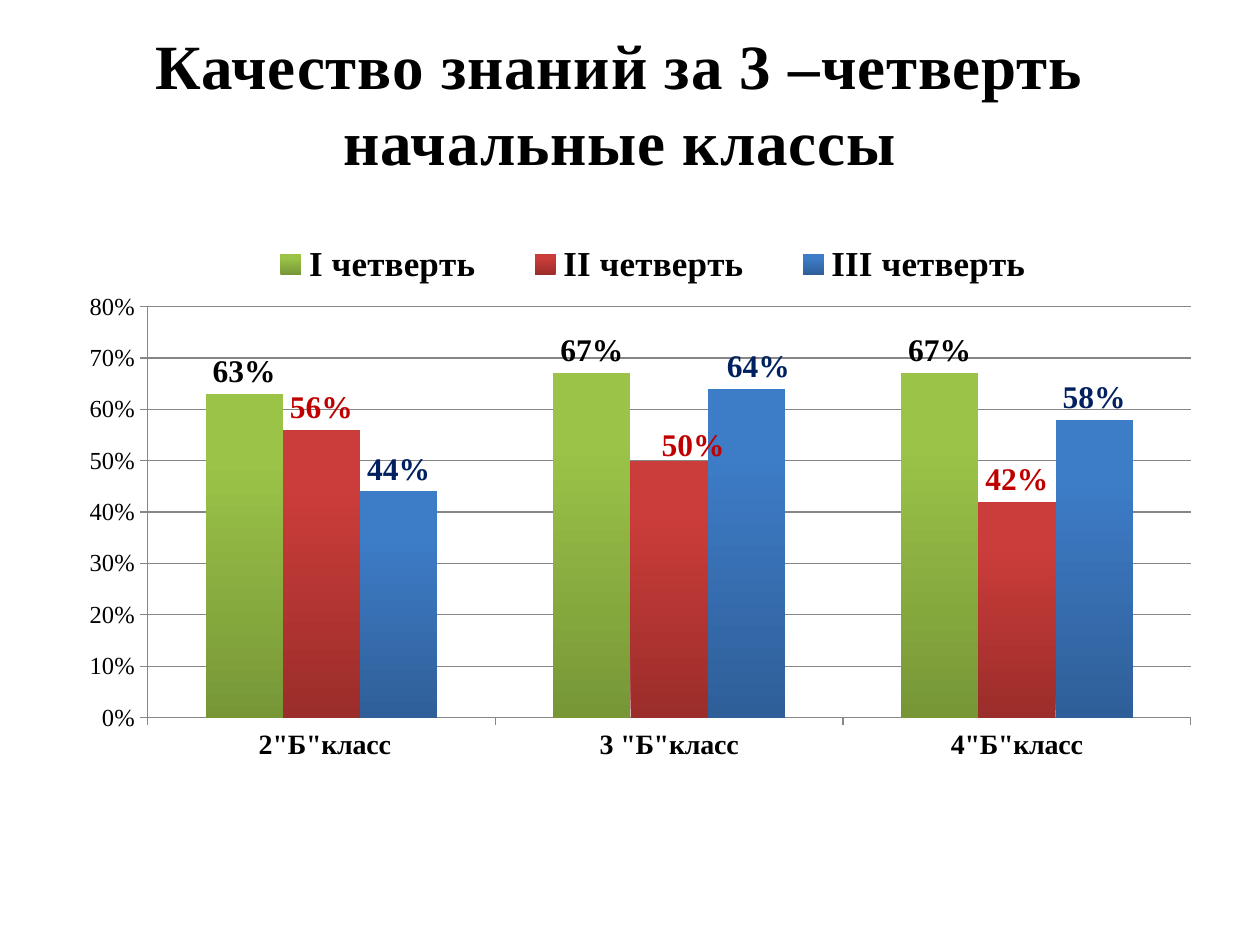
import pptx
import pptx.chart.data
import pptx.dml.color
import pptx.enum.chart
import pptx.enum.text
import pptx.oxml
import pptx.oxml.ns
import pptx.util
from pptx.util import Cm

RGBColor = pptx.dml.color.RGBColor
BLACK = RGBColor(0x00, 0x00, 0x00)
GRID_GRAY = RGBColor(0x86, 0x86, 0x86)
GREEN_DARK = RGBColor(0x77, 0x97, 0x37)
GREEN_LIGHT = RGBColor(0x9B, 0xC3, 0x48)
RED_DARK = RGBColor(0x9B, 0x2D, 0x2A)
RED_LIGHT = RGBColor(0xCB, 0x3D, 0x3A)
BLUE_DARK = RGBColor(0x2F, 0x5F, 0x99)
BLUE_LIGHT = RGBColor(0x3D, 0x7C, 0xC7)
LABEL_RED = RGBColor(0xC0, 0x00, 0x00)
LABEL_NAVY = RGBColor(0x00, 0x20, 0x60)

CLASSES = [' 2"Б"класс', '3 "Б"класс', '4"Б"класс']
QUARTERS = [
    ("I четверть", (0.63, 0.67, 0.67), GREEN_DARK, GREEN_LIGHT, BLACK),
    ("II четверть", (0.56, 0.5, 0.42), RED_DARK, RED_LIGHT, LABEL_RED),
    ("III четверть", (0.44, 0.64, 0.58), BLUE_DARK, BLUE_LIGHT, LABEL_NAVY),
]
MOVED_LABELS = {(1, 1): (0.02, 0.01), (2, 1): (0.01, 0)}


class QualitySlide:
    font_name = "Times New Roman"

    def __init__(self, presentation):
        self.slide = presentation.slides.add_slide(presentation.slide_layouts[5])

    def style(self, font, size, bold=False, color=BLACK):
        font.name = self.font_name
        font.size = pptx.util.Pt(size)
        font.bold = bold
        font.color.rgb = color

    def title(self, text, left, top, width, height):
        heading = self.slide.shapes.title
        heading.left, heading.top = Cm(left), Cm(top)
        heading.width, heading.height = Cm(width), Cm(height)
        frame = heading.text_frame
        frame.text = text
        frame.word_wrap = True
        frame.vertical_anchor = pptx.enum.text.MSO_ANCHOR.MIDDLE
        for paragraph in frame.paragraphs:
            paragraph.alignment = pptx.enum.text.PP_ALIGN.CENTER
            for run in paragraph.runs:
                self.style(run.font, 36, True)
                run.font._element.set("spc", "50")

    def layout(self, **settings):
        values = "".join(f'<c:{key} val="{value}"/>' for key, value in settings.items())
        return pptx.oxml.parse_xml(
            f'<c:layout {pptx.oxml.ns.nsdecls("c")}>'
            f"<c:manualLayout>{values}</c:manualLayout></c:layout>"
        )

    def place(self, element, **settings):
        for previous in element.findall(pptx.oxml.ns.qn("c:layout")):
            element.remove(previous)
        position = 1 if element.tag in map(pptx.oxml.ns.qn, ("c:legend", "c:dLbl")) else 0
        element.insert(position, self.layout(**settings))

    def column_chart(self, left, top, width, height):
        results = pptx.chart.data.CategoryChartData(number_format="0%")
        results.categories = CLASSES
        for name, values, *_ in QUARTERS:
            results.add_series(name, values)
        chart = self.slide.shapes.add_chart(
            pptx.enum.chart.XL_CHART_TYPE.COLUMN_CLUSTERED,
            Cm(left), Cm(top), Cm(width), Cm(height), results,
        ).chart
        chart.has_title = False
        self.style(chart.font, 18)
        plot = chart.plots[0]
        plot.gap_width = 150
        plot.overlap = 0
        plot.vary_by_categories = False
        self.place(
            chart._chartSpace.chart.plotArea, layoutTarget="inner",
            xMode="edge", yMode="edge", x=0.099, y=0.132, w=0.869, h=0.604,
        )
        self.axes(chart)
        self.legend(chart)
        for index, (series, quarter) in enumerate(zip(plot.series, QUARTERS)):
            self.columns(series, index, *quarter[2:])

    def axes(self, chart):
        outside = pptx.enum.chart.XL_TICK_MARK.OUTSIDE
        for axis, size, bold in (
            (chart.category_axis, 16, True), (chart.value_axis, 14, False),
        ):
            self.style(axis.tick_labels.font, size, bold)
            axis.major_tick_mark = outside
            axis.format.line.color.rgb = GRID_GRAY
        scale = chart.value_axis
        scale.minimum_scale, scale.maximum_scale, scale.major_unit = 0, 0.8, 0.1
        scale.tick_labels.number_format = "0%"
        scale.tick_labels.number_format_is_linked = False
        scale.has_major_gridlines = True
        scale.major_gridlines.format.line.color.rgb = GRID_GRAY

    def legend(self, chart):
        chart.has_legend = True
        chart.legend.position = pptx.enum.chart.XL_LEGEND_POSITION.TOP
        chart.legend.include_in_layout = False
        self.style(chart.legend.font, 20, True)
        self.place(
            chart.legend._element, xMode="edge", yMode="edge",
            x=0.17, y=0.03, w=0.7, h=0.08,
        )

    def columns(self, series, index, dark, light, label_color):
        fill = series.format.fill
        fill.gradient()
        fill.gradient_angle = 90
        for stop, color, position in zip(fill.gradient_stops, (dark, light), (0, 0.8)):
            stop.color.rgb = color
            stop.position = position
        series.invert_if_negative = False
        above = pptx.enum.chart.XL_LABEL_POSITION.OUTSIDE_END
        labels = series.data_labels
        labels.show_value = True
        labels.number_format = "0%"
        labels.number_format_is_linked = False
        labels.position = above
        self.style(labels.font, 18, True, label_color)
        for (quarter, point), (x, y) in MOVED_LABELS.items():
            if quarter == index:
                label = series.points[point].data_label
                self.style(label.font, 18, True, label_color)
                label.position = above
                self.place(label._dLbl, x=x, y=y)


def main():
    presentation = pptx.Presentation()
    presentation.slide_width, presentation.slide_height = Cm(25.4), Cm(19.05)
    page = QualitySlide(presentation)
    page.title("Качество знаний за 3 –четверть\vначальные классы", 1, 0.4, 23, 3.33)
    page.column_chart(0.58, 4.37, 24.2, 13.72)
    presentation.save("out.pptx")


if __name__ == "__main__":
    main()
